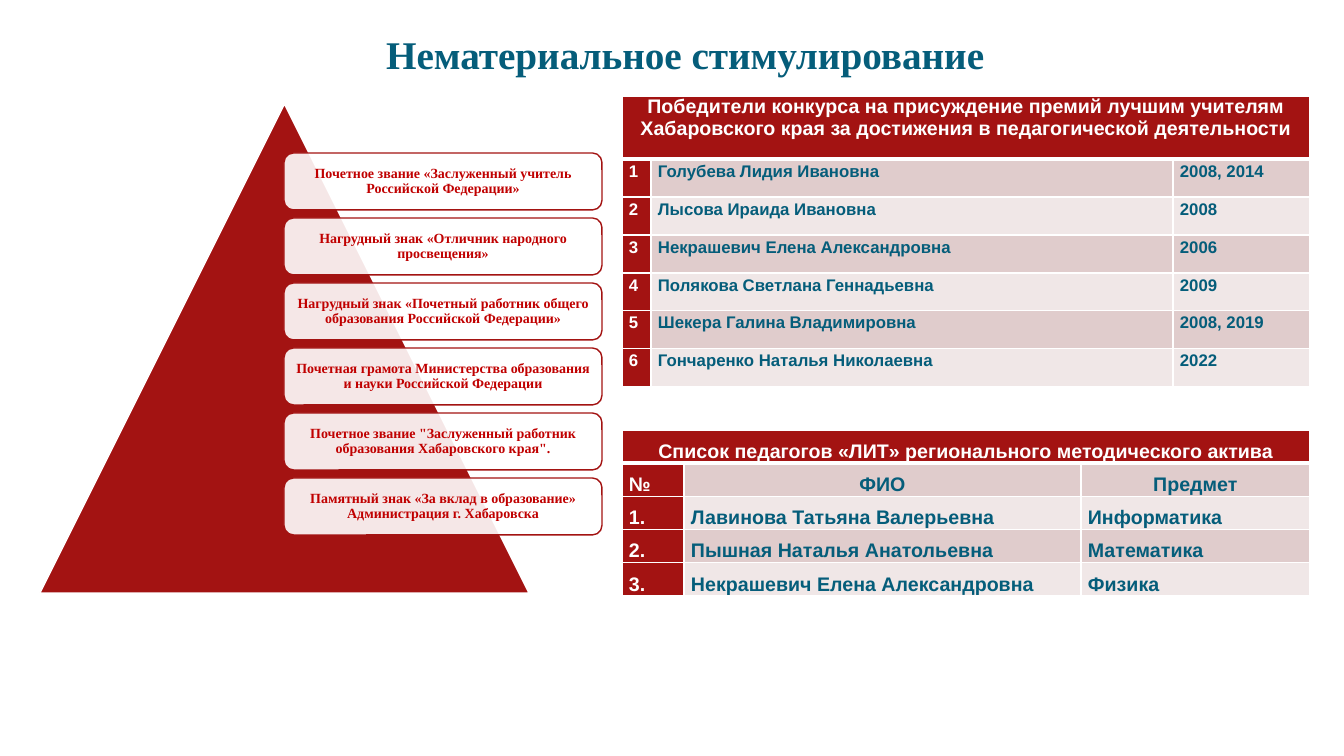
from dataclasses import dataclass

from pptx import Presentation
from pptx.dml.color import RGBColor
from pptx.enum.shapes import MSO_SHAPE as Shape
from pptx.enum.text import MSO_ANCHOR as Anchor, PP_ALIGN as Align
from pptx.oxml import parse_xml
from pptx.oxml.ns import nsdecls
from pptx.util import Pt
from lxml.etree import SubElement

TITLE = "Нематериальное стимулирование"
AWARDS = [
    "Почетное звание «Заслуженный учитель Российской Федерации»",
    "Нагрудный знак «Отличник народного просвещения»",
    "Нагрудный знак «Почетный работник общего образования Российской Федерации»",
    "Почетная грамота Министерства образования и науки Российской Федерации",
    "Почетное звание \"Заслуженный работник образования Хабаровского края\".",
    "Памятный знак «За вклад в образование» Администрация г. Хабаровска",
]
WINNERS = {
    "heading": "Победители конкурса на присуждение премий лучшим учителям "
               "Хабаровского края за достижения в педагогической деятельности",
    "rows": [
        ("1", "Голубева Лидия Ивановна", "2008, 2014"),
        ("2", "Лысова Ираида Ивановна", "2008"),
        ("3", "Некрашевич Елена Александровна", "2006"),
        ("4", "Полякова Светлана Геннадьевна", "2009"),
        ("5", "Шекера Галина Владимировна", "2008, 2019"),
        ("6", "Гончаренко Наталья Николаевна", "2022"),
    ],
    "top": 96, "columns": (29, 522, 137), "heading_height": 63, "row_height": 38,
    "size": 12, "align": Align.LEFT, "heading_spacing": 1.0, "spacing": 1.15, "after": 10,
    "centred": (),
}
ACTIVISTS = {
    "heading": "Список педагогов «ЛИТ» регионального методического актива",
    "rows": [
        ("№", "ФИО", "Предмет"),
        ("1.", "Лавинова Татьяна Валерьевна", "Информатика"),
        ("2.", "Пышная Наталья Анатольевна", "Математика"),
        ("3.", "Некрашевич Елена Александровна", "Физика"),
    ],
    "top": 430, "columns": (62, 397, 229), "heading_height": 33, "row_height": 33,
    "size": 14, "align": Align.JUSTIFY, "heading_spacing": 1.5, "spacing": 1.5, "after": 0,
    "centred": ("ФИО", "Предмет"),
}
TABLE_LEFT = 622


@dataclass(frozen=True)
class Theme:
    red: str = "A31312"
    award_text: str = "C00000"
    teal: str = "055D7A"
    white: str = "FFFFFF"
    bands: tuple = ("E0CCCC", "F0E7E7")
    serif: str = "Times New Roman"
    sans: str = "Arial"
    title_size: int = 28
    award_size: int = 10
    heading_size: int = 14


THEME = Theme()


def px(length):
    return round(length * 914400 / 100.8)


def box(*lengths):
    return [px(length) for length in lengths]


def write(frame, text, font, size, color, align, spacing=1.0, after=0):
    paragraph = frame.paragraphs[0]
    paragraph.alignment = align
    paragraph.line_spacing = spacing
    paragraph.space_before = Pt(0)
    paragraph.space_after = Pt(after)
    run = paragraph.add_run()
    run.text = text
    run.font.name = font
    run.font.size = Pt(size)
    run.font.bold = True
    run.font.color.rgb = RGBColor.from_string(color)


def paint(shape, fill, line):
    shape.shadow.inherit = False
    shape.fill.solid()
    shape.fill.fore_color.rgb = RGBColor.from_string(fill)
    shape.line.color.rgb = RGBColor.from_string(line)
    shape.line.width = Pt(1)


def add_pyramid(slide):
    group = slide.shapes.add_group_shape()
    pyramid = group.shapes.add_shape(Shape.ISOSCELES_TRIANGLE, *box(40, 104, 489, 489))
    paint(pyramid, THEME.red, THEME.white)
    for index, award in enumerate(AWARDS):
        plate = group.shapes.add_shape(
            Shape.ROUNDED_RECTANGLE, *box(284, 153 + 65 * index, 318, 57))
        paint(plate, THEME.white, THEME.red)
        color = plate.fill._xPr.find(".//{*}solidFill/{*}srgbClr")
        SubElement(color, color.tag.replace("srgbClr", "alpha"), val="90000")
        frame = plate.text_frame
        frame.word_wrap = True
        frame.vertical_anchor = Anchor.MIDDLE
        frame.margin_left = frame.margin_right = px(4)
        frame.margin_top = frame.margin_bottom = px(4)
        write(frame, award, THEME.serif, THEME.award_size, THEME.award_text,
              Align.CENTER, 0.9)


def style_cell(cell, fill, top=1, bottom=1):
    properties = cell._tc.get_or_add_tcPr()
    for side, width in (("L", 1), ("R", 1), ("T", top), ("B", bottom)):
        properties.append(parse_xml(
            f'<a:ln{side} {nsdecls("a")} w="{Pt(width)}"><a:solidFill>'
            f'<a:srgbClr val="{THEME.white}"/></a:solidFill></a:ln{side}>'))
    cell.fill.solid()
    cell.fill.fore_color.rgb = RGBColor.from_string(fill)
    cell.margin_left = cell.margin_right = px(7)
    cell.margin_top = cell.margin_bottom = 0


def add_list(slide, content):
    rows, columns = content["rows"], content["columns"]
    heights = [content["heading_height"]] + [content["row_height"]] * len(rows)
    table = slide.shapes.add_table(
        len(heights), len(columns),
        *box(TABLE_LEFT, content["top"], sum(columns), sum(heights))).table
    for column, width in zip(table.columns, columns):
        column.width = px(width)
    for row, height in zip(table.rows, heights):
        row.height = px(height)

    for column in range(len(columns)):
        style_cell(table.cell(0, column), THEME.red, bottom=3)
    heading = table.cell(0, 0)
    heading.merge(table.cell(0, len(columns) - 1))
    write(heading.text_frame, content["heading"], THEME.sans, THEME.heading_size,
          THEME.white, Align.CENTER, content["heading_spacing"])

    for index, values in enumerate(rows):
        for column, value in enumerate(values):
            cell = table.cell(index + 1, column)
            is_number = column == 0
            style_cell(cell, THEME.red if is_number else THEME.bands[index % 2],
                       top=3 if index == 0 else 1)
            align = Align.CENTER if value in content["centred"] else content["align"]
            write(cell.text_frame, value, THEME.sans, content["size"],
                  THEME.white if is_number else THEME.teal, align,
                  content["spacing"], content["after"])


def main():
    deck = Presentation()
    deck.slide_width, deck.slide_height = box(1344, 756)
    slide = deck.slides.add_slide(deck.slide_layouts[5])
    title = slide.shapes.title
    title.left, title.top, title.width, title.height = box(376, 31, 863, 72)
    title.text_frame.word_wrap = True
    title.text_frame.vertical_anchor = Anchor.TOP
    write(title.text_frame, TITLE, THEME.serif, THEME.title_size, THEME.teal,
          Align.LEFT, 0.9)
    add_pyramid(slide)
    add_list(slide, WINNERS)
    add_list(slide, ACTIVISTS)
    deck.save("out.pptx")


if __name__ == "__main__":
    main()
